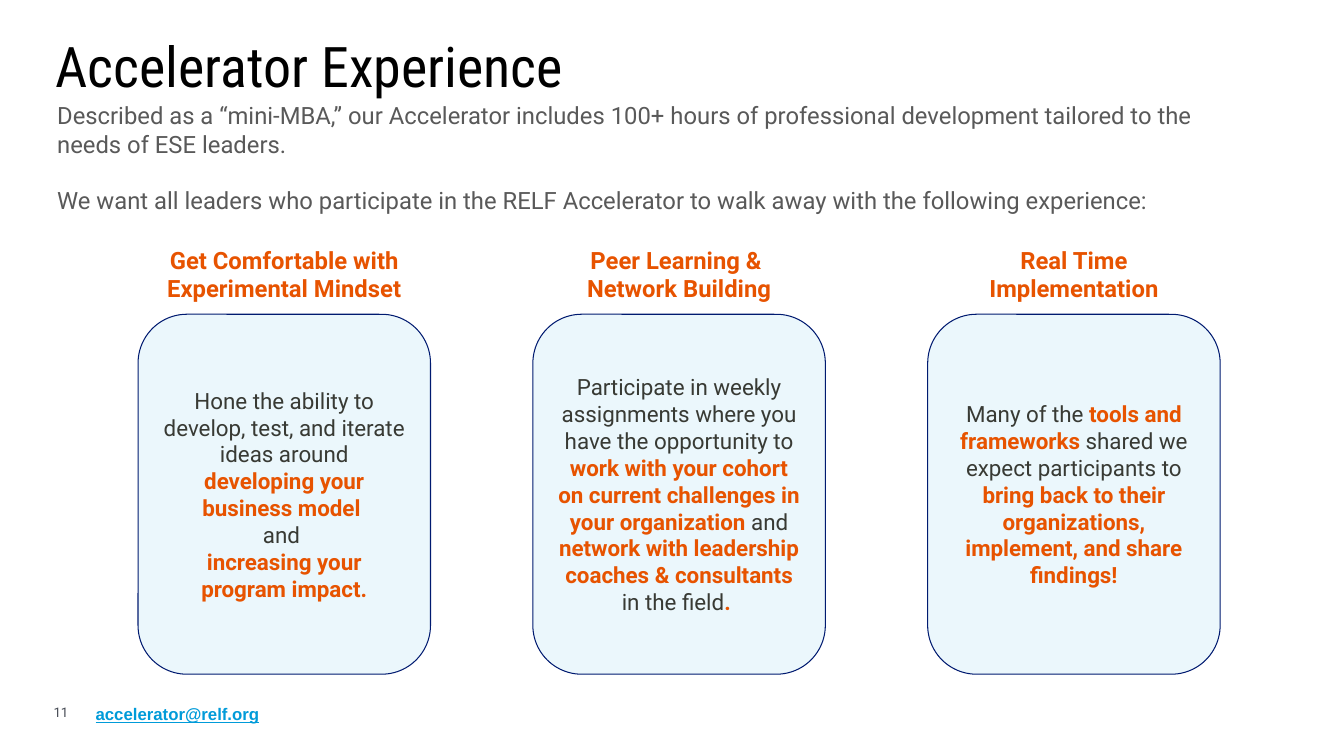
from lxml import etree
from pptx import Presentation
from pptx.dml.color import RGBColor
from pptx.enum.shapes import MSO_SHAPE as Shape
from pptx.enum.text import MSO_ANCHOR as Anchor, MSO_AUTO_SIZE as AutoSize, PP_ALIGN as Align
from pptx.oxml.ns import qn
from pptx.util import Cm, Pt

COLORS = {
    "title": "000000",
    "intro": "595959",
    "number": "474C55",
    "body": "383A34",
    "accent": "E75300",
    "link": "009BD9",
    "outline": "001A70",
}
INSET = 0.25
CARD_LEFT, CARD_TOP, CARD_WIDTH, CARD_HEIGHT, CARD_PITCH = 3.48, 7.92, 7.37, 9.07, 9.95

INTRO = [
    "Described as a “mini-MBA,” our Accelerator includes 100+ hours of professional "
    "development tailored to the needs of ESE leaders.",
    "We want all leaders who participate in the RELF Accelerator to walk away with "
    "the following experience:",
]

# Each card paragraph is a list of (text, is_emphasised) runs.
COLUMNS = [
    (["Get Comfortable with Experimental Mindset"], 8.33, [
        [("Hone the ability to develop, test, and iterate ideas around ", False),
         ("developing your business model ", True)],
        [("and ", False)],
        [("increasing your program impact.", True)],
    ]),
    (["Peer Learning & ", "Network Building"], 8.33, [
        [("Participate in weekly assignments where you have the opportunity to ", False),
         ("work with your cohort on current challenges in your organization ", True),
         ("and", False)],
        [("network with leadership coaches & consultants ", True),
         ("in the field", False), (". ", True)],
    ]),
    (["Real Time Implementation"], 6.68, [
        [("Many of the ", False), ("tools and frameworks", True),
         (" shared we expect participants to ", False),
         ("bring back to their organizations, implement, and share findings!", True)],
    ]),
]


def set_font(font, color, size, name="Roboto", bold=False):
    """Give a font its face, size, weight and colour."""
    font.name, font.size, font.bold = name, Pt(size), bold
    font.color.rgb = RGBColor.from_string(COLORS[color])


def set_frame(frame, inset=INSET, anchor=Anchor.TOP):
    """Set wrapping, margins and anchor of a text frame."""
    frame.word_wrap = True
    frame.auto_size = AutoSize.NONE
    frame.vertical_anchor = anchor
    frame.margin_left = frame.margin_right = Cm(inset)
    frame.margin_top = frame.margin_bottom = Cm(inset)


def paragraphs_for(frame, items):
    """Yield a paragraph with each item, reusing the first one."""
    for index, item in enumerate(items):
        yield (frame.add_paragraph() if index else frame.paragraphs[0]), item


def place(shape, left, top, width, height):
    """Move and size a shape in centimetres."""
    shape.left, shape.top, shape.width, shape.height = map(Cm, (left, top, width, height))


def fill_title(slide):
    """Write the slide title."""
    title = slide.shapes.title
    place(title, 1.4, 0.79, 29.54, 1.7)
    set_frame(title.text_frame, 0, Anchor.MIDDLE)
    paragraph = title.text_frame.paragraphs[0]
    paragraph.text = "Accelerator Experience"
    paragraph.alignment = Align.LEFT
    set_font(paragraph.font, "title", 40, "Roboto Condensed")


def fill_intro(slide):
    """Write the introduction in the body placeholder without bullets."""
    body = slide.placeholders[1]
    place(body, 1.19, 2.29, 29.54, 3.43)
    set_frame(body.text_frame)
    for paragraph, text in paragraphs_for(body.text_frame, INTRO):
        paragraph.text = text
        properties = paragraph._p.get_or_add_pPr()
        properties.set("marL", "0")
        properties.set("indent", "0")
        etree.SubElement(properties, qn("a:buNone"))
        paragraph.space_before = Pt(0 if text == INTRO[0] else 20)
        set_font(paragraph.font, "intro", 17)


def add_label(slide, lines, box, color, size, inset=INSET, anchor=Anchor.TOP,
              align=Align.LEFT, name="Roboto", bold=False):
    """Add a text box of evenly styled lines and return its paragraphs."""
    frame = slide.shapes.add_textbox(*map(Cm, box)).text_frame
    set_frame(frame, inset, anchor)
    for paragraph, text in paragraphs_for(frame, lines):
        paragraph.text = text
        paragraph.alignment = align
        set_font(paragraph.font, color, size, name, bold)
    return frame.paragraphs


def add_card(slide, left, content):
    """Add a rounded, translucent card with emphasised phrases."""
    card = slide.shapes.add_shape(
        Shape.ROUNDED_RECTANGLE, *map(Cm, (left, CARD_TOP, CARD_WIDTH, CARD_HEIGHT)))
    card.shadow.inherit = False
    card.adjustments[0] = 0.167
    card.fill.solid()
    card.fill.fore_color.rgb = RGBColor.from_string(COLORS["link"])
    color = card._element.spPr.find(qn("a:solidFill")).find(qn("a:srgbClr"))
    etree.SubElement(color, qn("a:alpha")).set("val", "8000")
    card.line.color.rgb = RGBColor.from_string(COLORS["outline"])
    card.line.width = Pt(0.75)
    set_frame(card.text_frame, anchor=Anchor.MIDDLE)
    for paragraph, runs in paragraphs_for(card.text_frame, content):
        paragraph.alignment = Align.CENTER
        for text, emphasised in runs:
            run = paragraph.add_run()
            run.text = text
            set_font(run.font, "accent" if emphasised else "body", 16, bold=emphasised)


def add_columns(slide):
    """Add each heading centred above its card."""
    for index, (heading, width, content) in enumerate(COLUMNS):
        left = CARD_LEFT + index * CARD_PITCH
        heading_left = left + (CARD_WIDTH - width) / 2
        add_label(slide, heading, (heading_left, 5.94, width, 1.96), "accent", 17,
                  align=Align.CENTER, bold=True)
        add_card(slide, left, content)


def add_footer(slide):
    """Add the page number and the contact address."""
    add_label(slide, ["11"], (1.35, 17.73, 2.9, 0.41), "number", 9.5, 0, Anchor.MIDDLE)
    address, = add_label(slide, ["accelerator@relf.org"], (2.16, 17.42, 8.33, 1.02),
                         "link", 12, name="Arial", bold=True)
    address.font.underline = True
    address.line_spacing = 1.15


def main():
    """Build and save the slide."""
    presentation = Presentation()
    presentation.slide_width, presentation.slide_height = Cm(33.87), Cm(19.05)
    slide = presentation.slides.add_slide(presentation.slide_layouts[1])
    fill_title(slide)
    fill_intro(slide)
    add_columns(slide)
    add_footer(slide)
    presentation.save("out.pptx")


if __name__ == "__main__":
    main()
